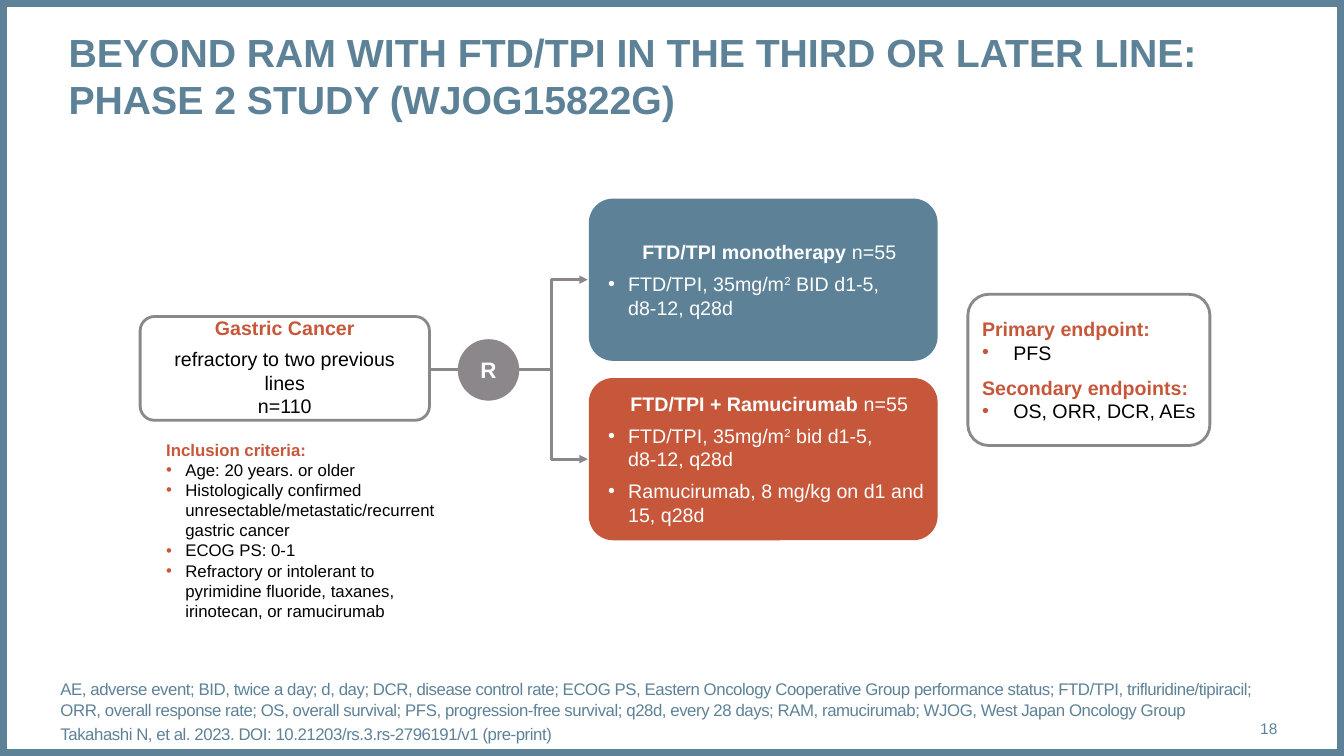
import pptx
import pptx.chart.data
import pptx.dml.color
import pptx.enum.shapes
import pptx.enum.text
import pptx.oxml
import pptx.oxml.ns
import pptx.util
from dataclasses import dataclass

Inches = pptx.util.Inches
Pt = pptx.util.Pt
SHAPES = pptx.enum.shapes.MSO_SHAPE
ALIGN = pptx.enum.text.PP_ALIGN
ANCHOR = pptx.enum.text.MSO_ANCHOR


@dataclass(frozen=True)
class Theme:
    font: str = "Arial"
    blue: str = "5D8298"
    red: str = "C6573B"
    gray: str = "8B878B"
    white: str = "FFFFFF"
    black: str = "000000"
    title: int = 28
    badge: int = 16
    body: int = 14
    small: int = 12
    number: int = 11


THEME = Theme()
WIDTH, HEIGHT = 13.33, 7.5

# Content: a paragraph is a list of (text, style) runs plus a paragraph kind
TITLE = [("plain", [("BEYOND RAM WITH FTD/TPI IN THE THIRD OR LATER LINE: \n"
                    "PHASE 2 STUDY (WJOG15822G)", "bold")])]
POPULATION = [
    ("lead", [("Gastric Cancer", "heading")]),
    ("center", [("refractory to two previous lines", "plain")]),
    ("center", [("n=110", "plain")]),
]
INCLUSION = [("plain", [("Inclusion criteria:", "heading")])] + [
    ("bullet", [(criterion, "plain")]) for criterion in (
        "Age: 20 years. or older",
        "Histologically confirmed unresectable/metastatic/recurrent gastric cancer",
        "ECOG PS: 0-1",
        "Refractory or intolerant to pyrimidine fluoride, taxanes, irinotecan, or ramucirumab",
    )]
ARMS = [
    (THEME.blue, "FTD/TPI monotherapy ", "BID", []),
    (THEME.red, "FTD/TPI + Ramucirumab ", "bid", ["Ramucirumab, 8 mg/kg on d1 and 15, q28d"]),
]
ENDPOINTS = [
    ("plain", [("Primary endpoint:", "heading")]),
    ("bullet", [("PFS", "plain")]),
    ("gap", [("Secondary endpoints:", "heading")]),
    ("bullet", [("OS, ORR, DCR, AEs", "plain")]),
]
FOOTNOTES = [("note", [(note, "tight")]) for note in (
    "AE, adverse event; BID, twice a day; d, day; DCR, disease control rate; ECOG PS, Eastern "
    "Oncology Cooperative Group performance status; FTD/TPI, trifluridine/tipiracil; ORR, overall "
    "response rate; OS, overall survival; PFS, progression-free survival; q28d, every 28 days; "
    "RAM, ramucirumab; WJOG, West Japan Oncology Group",
    "Takahashi N, et al. 2023. DOI: 10.21203/rs.3.rs-2796191/v1 (pre-print)",
)]

# Space before and after each kind of paragraph, in points
SPACING = {"note": (3, 0), "gap": (8.5, 0), "lead": (0, 5),
           "arm title": (0, 6), "arm bullet": (0, 6)}


def rgb(color):
    return pptx.dml.color.RGBColor.from_string(color)


def add_bullet(paragraph, indent, color):
    properties = paragraph._p.get_or_add_pPr()
    properties.set("marL", str(Inches(indent)))
    properties.set("indent", str(-Inches(indent)))
    namespace = pptx.oxml.ns.nsdecls("a")
    for xml in (f'<a:buClr {namespace}><a:srgbClr val="{color}"/></a:buClr>',
                f'<a:buFont {namespace} typeface="{THEME.font}"/>',
                f'<a:buChar {namespace} char="•"/>'):
        properties.append(pptx.oxml.parse_xml(xml))


def write_text(shape, content, size=THEME.body, color=THEME.black, align=ALIGN.LEFT,
               anchor=ANCHOR.TOP, insets=(0, 0, 0, 0), wrap=True,
               indent=0.2, bullet_color=THEME.red):
    frame = shape.text_frame
    frame.auto_size = pptx.enum.text.MSO_AUTO_SIZE.NONE
    frame.word_wrap = wrap
    frame.vertical_anchor = anchor
    (frame.margin_left, frame.margin_top,
     frame.margin_right, frame.margin_bottom) = map(Inches, insets)
    for index, (kind, runs) in enumerate(content):
        paragraph = frame.add_paragraph() if index else frame.paragraphs[0]
        centered = kind in ("lead", "center", "arm title")
        paragraph.alignment = ALIGN.CENTER if centered else align
        before, after = SPACING.get(kind, (0, 0))
        paragraph.space_before, paragraph.space_after = Pt(before), Pt(after)
        if kind == "lead":
            paragraph.line_spacing = 0.9
        if kind.endswith("bullet"):
            add_bullet(paragraph, indent, bullet_color)
        for text, style in runs:
            for line_index, line in enumerate(text.split("\n")):
                if line_index:
                    paragraph.add_line_break()
                run = paragraph.add_run()
                run.text = line
                run.font.name, run.font.size = THEME.font, Pt(size)
                run.font.bold = style in ("bold", "heading")
                run.font.color.rgb = rgb(THEME.red if style == "heading" else color)
                if style == "super":
                    run._r.get_or_add_rPr().set("baseline", "30000")
                if style == "tight":
                    run._r.get_or_add_rPr().set("spc", "-30")


def add_box(slide, kind, place, fill=None, line=None, line_width=2, corner=None):
    shape = slide.shapes.add_shape(kind, *map(Inches, place))
    shape.shadow.inherit = False
    if fill:
        shape.fill.solid()
        shape.fill.fore_color.rgb = rgb(fill)
    else:
        shape.fill.background()
    if line:
        shape.line.color.rgb = rgb(line)
        shape.line.width = Pt(line_width)
    else:
        shape.line.fill.background()
    if corner:
        shape.adjustments[0] = corner
    return shape


def add_line(slide, start, end, arrow=False):
    connector = slide.shapes.add_connector(
        pptx.enum.shapes.MSO_CONNECTOR.STRAIGHT, *map(Inches, start + end))
    connector.line.color.rgb = rgb(THEME.gray)
    connector.line.width = Pt(2)
    namespace = pptx.oxml.ns.nsdecls("a")
    if arrow:
        connector.line._get_or_add_ln().append(
            pptx.oxml.parse_xml(f'<a:tailEnd {namespace} type="triangle"/>'))
    connector._element.spPr.append(pptx.oxml.parse_xml(f"<a:effectLst {namespace}/>"))


def add_text(slide, place, content, **text_format):
    write_text(slide.shapes.add_textbox(*map(Inches, place)), content, **text_format)


def main():
    presentation = pptx.Presentation()
    presentation.slide_width, presentation.slide_height = Inches(WIDTH), Inches(HEIGHT)
    slide = presentation.slides.add_slide(presentation.slide_layouts[5])

    # Frame and title
    add_box(slide, SHAPES.RECTANGLE, (0, 0, WIDTH, HEIGHT), line=THEME.blue, line_width=10)
    title = slide.shapes.title
    title.left, title.top, title.width, title.height = map(Inches, (0.68, 0.28, 11.99, 0.94))
    write_text(title, TITLE, size=THEME.title, color=THEME.blue)

    # Treatment arms, each with its arrow
    arm_left, arm_top, arm_width, arm_height, arm_pitch = 5.84, 1.97, 3.46, 1.61, 1.78
    branch_x, middle_y = 5.47, 3.67
    arrow_levels = []
    for index, (fill, name, frequency, extras) in enumerate(ARMS):
        top = arm_top + index * arm_pitch
        arm = add_box(slide, SHAPES.ROUNDED_RECTANGLE, (arm_left, top, arm_width, arm_height),
                      fill=fill, corner=0.15)
        dose = [("FTD/TPI, 35mg/m", "plain"), ("2", "super"),
                (f" {frequency} d1-5, \nd8-12, q28d", "plain")]
        content = [("arm title", [(name, "bold"), ("n=55", "plain")]), ("arm bullet", dose)]
        content += [("arm bullet", [(extra, "plain")]) for extra in extras]
        write_text(arm, content, color=THEME.white, anchor=ANCHOR.MIDDLE,
                   insets=(0.12, 0.05, 0, 0.05), bullet_color=THEME.white)
        level = top + arm_height / 2
        arrow_levels.append(level)
        add_line(slide, (branch_x, level), (arm_left - 0.01, level), arrow=True)

    # Branch, trunk and randomisation badge
    add_line(slide, (branch_x, arrow_levels[0] - 0.01), (branch_x, arrow_levels[-1] + 0.01))
    add_line(slide, (4.21, middle_y), (branch_x, middle_y))
    badge_size = 0.61
    badge = add_box(slide, SHAPES.OVAL, (4.54, middle_y - badge_size / 2, badge_size, badge_size),
                    fill=THEME.gray)
    write_text(badge, [("center", [("R", "bold")])], size=THEME.badge, color=THEME.white,
               anchor=ANCHOR.MIDDLE, insets=(0.1, 0.05, 0.1, 0.05), wrap=False)

    # Outlined boxes: population and endpoints
    for place, content in (((1.39, 3.14, 2.87, 1.03), POPULATION),
                           ((9.6, 2.92, 2.4, 1.5), ENDPOINTS)):
        box = add_box(slide, SHAPES.ROUNDED_RECTANGLE, place, fill=THEME.white,
                      line=THEME.gray, corner=0.138)
        write_text(box, content, anchor=ANCHOR.MIDDLE, insets=(0.08, 0.04, 0.08, 0.04),
                   indent=0.31)

    # Inclusion criteria, footnotes and slide number
    add_text(slide, (1.55, 4.31, 2.99, 2.12), INCLUSION, size=THEME.small,
             insets=(0.1, 0.05, 0.1, 0.05), indent=0.19)
    add_text(slide, (0.6, 6.98, 12.13, 0.4), FOOTNOTES, size=THEME.small, color=THEME.blue,
             anchor=ANCHOR.BOTTOM)
    add_text(slide, (11.81, 7.03, 0.86, 0.4), [("plain", [("18", "plain")])],
             size=THEME.number, color=THEME.blue, align=ALIGN.RIGHT, anchor=ANCHOR.MIDDLE)

    presentation.save("out.pptx")


if __name__ == "__main__":
    main()
